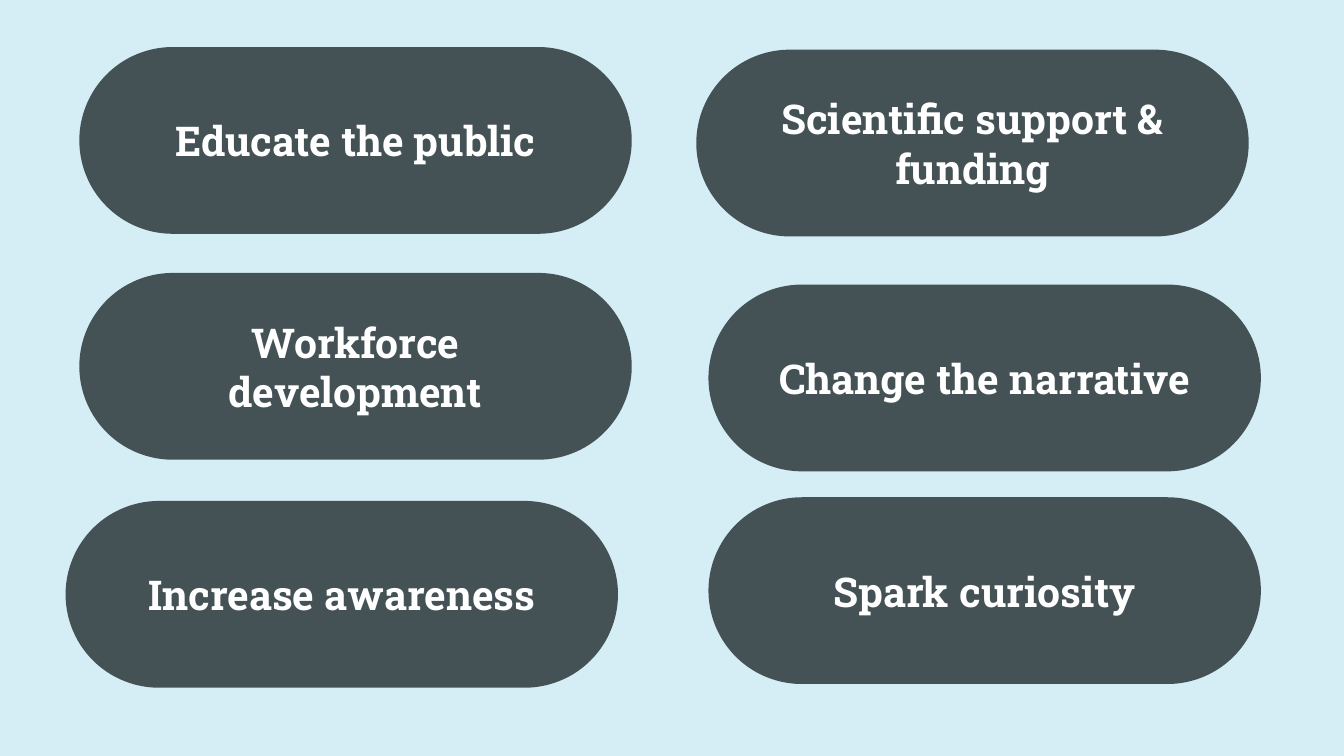
"""Build a slide of six outreach goals shown as rounded pills."""
import pptx
import pptx.dml.color
import pptx.enum.shapes
import pptx.enum.text
import pptx.util
from pptx.util import Cm

PALE_BLUE = pptx.dml.color.RGBColor(0xD5, 0xED, 0xF4)
SLATE = pptx.dml.color.RGBColor(0x44, 0x52, 0x56)
WHITE = pptx.dml.color.RGBColor(0xFF, 0xFF, 0xFF)

GOALS = [
    ("Educate the public", 1.5, 0.89),
    ("Workforce development", 1.5, 5.16),
    ("Increase awareness", 1.24, 9.47),
    ("Scientific support & funding", 13.16, 0.94),
    ("Change the narrative", 13.39, 5.38),
    ("Spark curiosity", 13.39, 9.4),
]


class GoalSlide:
    font_name = "Roboto Slab"
    font_size = pptx.util.Pt(22)
    pill_width = Cm(10.44)
    pill_height = Cm(3.53)
    inset = Cm(0.25)

    def __init__(self, presentation):
        self.slide = presentation.slides.add_slide(presentation.slide_layouts[6])
        background = self.slide.background.fill
        background.solid()
        background.fore_color.rgb = PALE_BLUE

    def add_pill(self, text, left, top):
        shape = self.slide.shapes.add_shape(
            pptx.enum.shapes.MSO_SHAPE.ROUNDED_RECTANGLE,
            Cm(left), Cm(top), self.pill_width, self.pill_height)
        shape.adjustments[0] = 0.5
        shape.shadow.inherit = False
        shape.fill.solid()
        shape.fill.fore_color.rgb = SLATE
        shape.line.fill.background()

        frame = shape.text_frame
        frame.word_wrap = True
        frame.vertical_anchor = pptx.enum.text.MSO_ANCHOR.MIDDLE
        frame.margin_left = frame.margin_right = self.inset
        frame.margin_top = frame.margin_bottom = self.inset
        frame.text = text

        paragraph = frame.paragraphs[0]
        paragraph.alignment = pptx.enum.text.PP_ALIGN.CENTER
        paragraph.font.name = self.font_name
        paragraph.font.size = self.font_size
        paragraph.font.bold = True
        paragraph.font.color.rgb = WHITE


def main():
    presentation = pptx.Presentation()
    presentation.slide_width = Cm(25.4)
    presentation.slide_height = Cm(14.29)
    goal_slide = GoalSlide(presentation)
    for text, left, top in GOALS:
        goal_slide.add_pill(text, left, top)
    presentation.save("out.pptx")


if __name__ == "__main__":
    main()
